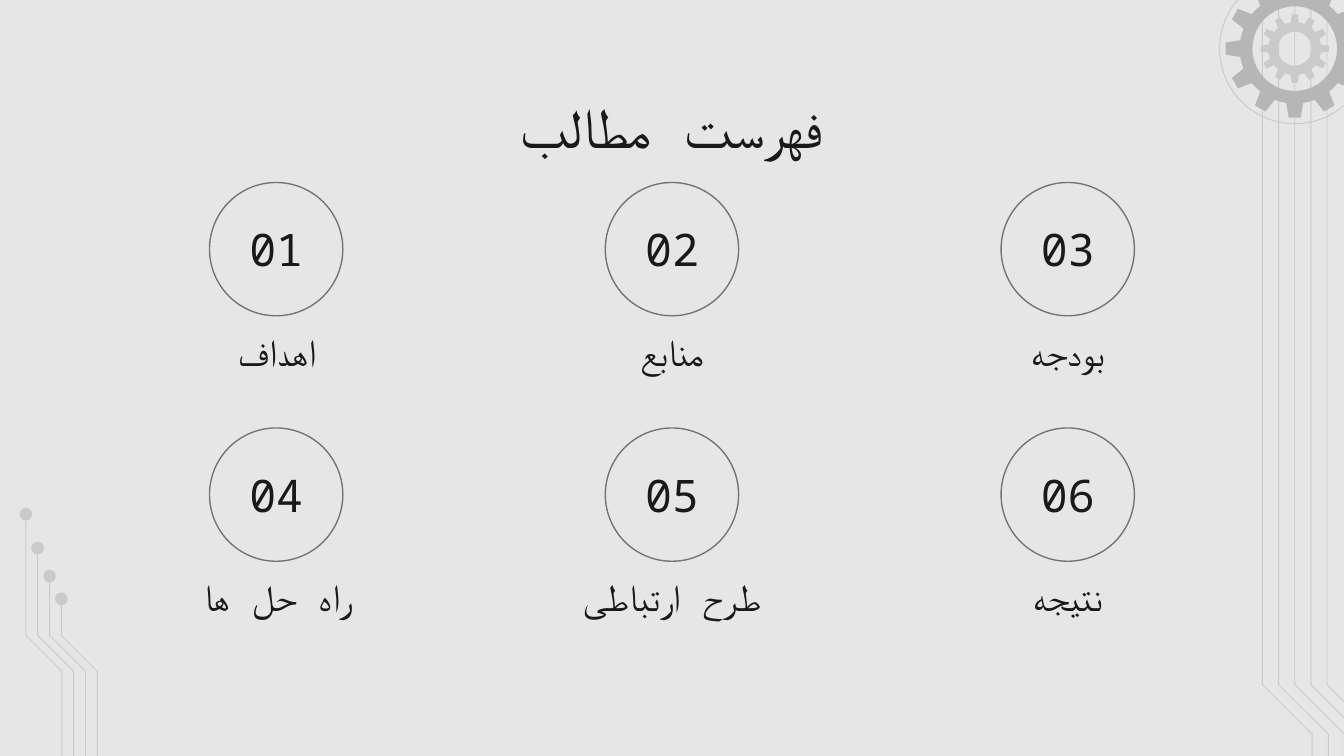
import math

from lxml import etree
from pptx import Presentation
from pptx import util as u
from pptx.dml import color
from pptx.enum import shapes, text
from pptx.oxml import ns

FONT = "Noto Sans Mono"
INK, PALE, GREY, RIM, PAPER = "191919", "CACACA", "B6B6B6", "747474", "E6E6E6"
WIDTH, HEIGHT = 25.4, 14.29
TOPICS = ["اهداف", "منابع", "بودجه", "راه حل ها", "طرح ارتباطی", "نتیجه"]
FRAME = {
    "word_wrap": True,
    "margin_left": u.Cm(0.25),
    "margin_right": u.Cm(0.25),
    "margin_top": u.Cm(0.25),
    "margin_bottom": u.Cm(0.25),
}


def apply(target, values):
    """Set each named attribute on the target."""
    for name, value in values.items():
        setattr(target, name, value)


def rgb(code):
    """Turn a hex string into a colour."""
    return color.RGBColor.from_string(code)


def paint(shape, fill=None, line=None, weight=0.5):
    """Give a shape its fill and outline, and no shadow."""
    shape.shadow.inherit = False
    for part, code in ((shape.fill, fill), (shape.line.fill, line)):
        if code:
            part.solid()
            part.fore_color.rgb = rgb(code)
        else:
            part.background()
    if line:
        shape.line.width = u.Pt(weight)


def add_circle(page, x, y, radius, **style):
    """Draw a circle around a centre point."""
    circle = page.shapes.add_shape(
        shapes.MSO_SHAPE.OVAL, u.Cm(x - radius), u.Cm(y - radius), u.Cm(2 * radius), u.Cm(2 * radius))
    paint(circle, **style)


def add_text(page, words, left, top, width, height, size, anchor=text.MSO_ANCHOR.TOP):
    """Add centred right-to-left text."""
    box = page.shapes.add_textbox(u.Cm(left), u.Cm(top), u.Cm(width), u.Cm(height))
    apply(box.text_frame, {**FRAME, "vertical_anchor": anchor})
    para = box.text_frame.paragraphs[0]
    para.alignment = text.PP_ALIGN.CENTER
    para._p.get_or_add_pPr().set("rtl", "1")
    span = para.add_run()
    span.text = words
    apply(span.font, {"size": u.Pt(size), "name": FONT})
    span.font.color.rgb = rgb(INK)
    etree.SubElement(span._r.get_or_add_rPr(), ns.qn("a:cs")).set("typeface", FONT)


def add_outline(page, contours, closed, **style):
    """Build one freeform from lists of points."""
    contours = [[(u.Cm(x), u.Cm(y)) for x, y in points] for points in contours]
    builder = page.shapes.build_freeform(*contours[0][0])
    for index, points in enumerate(contours):
        if index:
            builder.move_to(*points[0])
        builder.add_line_segments(points[1:], close=closed)
    paint(builder.convert_to_shape(), **style)


def add_trace(page, x, top, bend, shift):
    """Draw a circuit trace that steps sideways and runs to the bottom edge."""
    points = [(x, top), (x, bend), (x + shift, bend + shift), (x + shift, HEIGHT)]
    add_outline(page, [points], False, line=PALE)


def add_gear(page, x, y, tip, body, hole, fill):
    """Draw a twelve-toothed gear with a round hole."""
    def at(radius, degrees):
        angle = math.radians(degrees)
        return x + radius * math.sin(angle), y - radius * math.cos(angle)

    profile = [(body, -8.7), (tip, -5), (tip, 5), (body, 8.7), (body, 15)]
    rim = [at(radius, 30 * tooth + turn) for tooth in range(12) for radius, turn in profile]
    bore = [at(hole, 5 * step) for step in range(72)]
    add_outline(page, [rim, bore], True, fill=fill)


def add_decoration(page):
    """Draw the circuit traces and the gears."""
    for index in range(5):
        add_trace(page, 23.86 + 1.22 * index / 4, 0, 12.94, 0.94)
    for index, top in enumerate((9.72, 10.36, 10.89, 11.32)):
        x = 0.49 + 0.67 * index / 3
        add_trace(page, x, top, 12.01, 0.68)
        add_circle(page, x, top, 0.12, fill=PALE)
    x, y = 24.47, 0.92
    add_gear(page, x, y, 0.65, 0.5, 0.32, PALE)
    add_gear(page, x, y, 1.31, 1.04, 0.8, GREY)
    add_circle(page, x, y, 1.42, line=PALE, weight=0.5)


def add_topic(page, index, words):
    """Place a numbered circle and its label in the grid."""
    row, column = divmod(index, 3)
    x, top = WIDTH / 2 + 7.48 * (column - 1), 3.45 + 4.64 * row
    add_circle(page, x, top + 1.26, 1.26, line=RIM, weight=0.75)
    add_text(page, f"{index + 1:02}", x - 1.26, top + 0.54, 2.52, 1.47, 24, text.MSO_ANCHOR.BOTTOM)
    add_text(page, words, x - 3.23, top + 2.52, 6.46, 2.11, 20)


def main():
    """Build the contents slide."""
    deck = Presentation()
    apply(deck, {"slide_width": u.Cm(WIDTH), "slide_height": u.Cm(HEIGHT)})
    page = deck.slides.add_slide(deck.slide_layouts[6])
    page.background.fill.solid()
    page.background.fill.fore_color.rgb = rgb(PAPER)
    add_decoration(page)
    add_text(page, "فهرست مطالب", 2, 1.5, 21.4, 1.6, 30)
    for index, words in enumerate(TOPICS):
        add_topic(page, index, words)
    deck.save("out.pptx")


if __name__ == "__main__":
    main()
